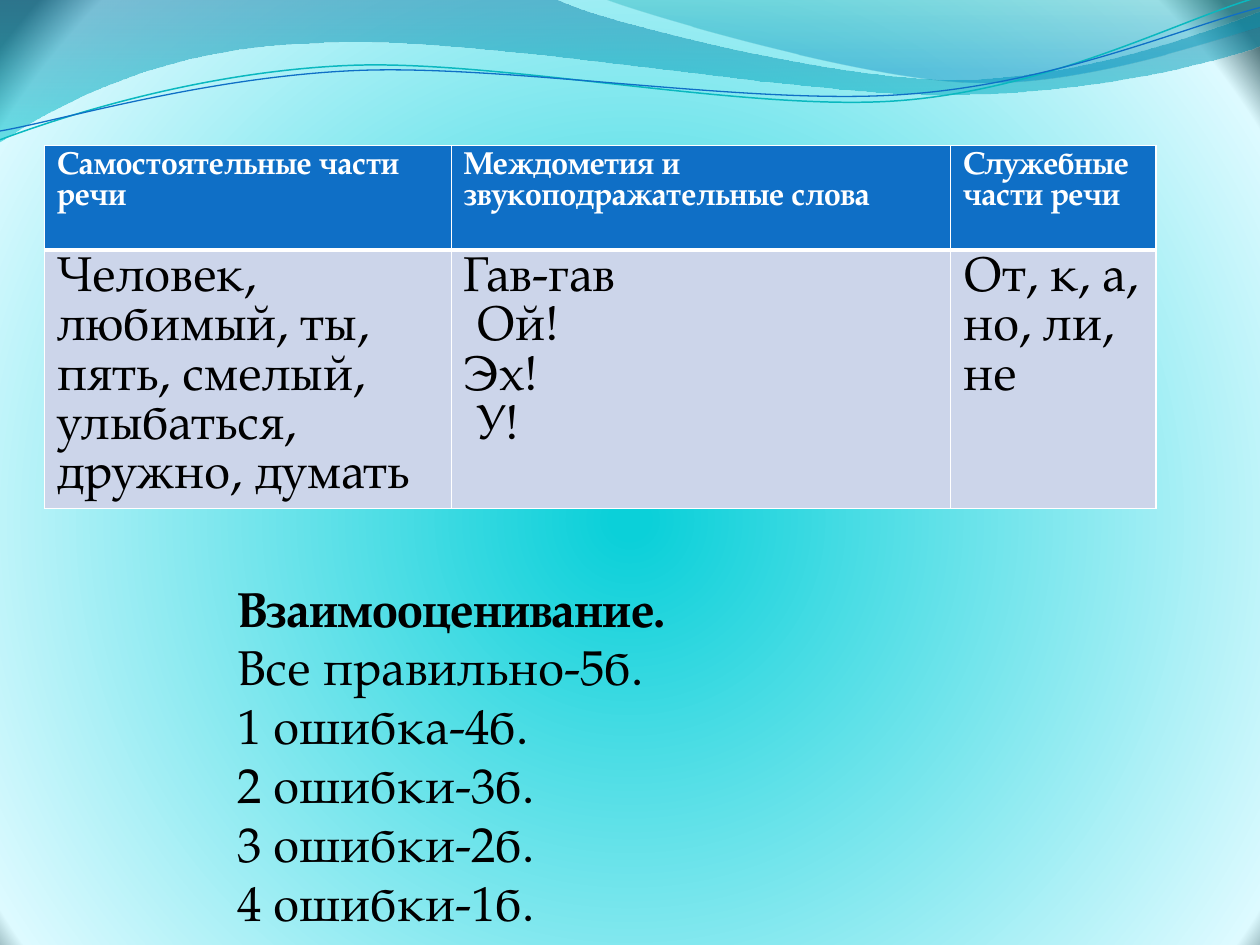
from lxml import etree
from pptx import Presentation
from pptx import util as u
from pptx.dml.color import RGBColor
from pptx.enum import text
from pptx.oxml import ns

COLORS = {
    "white": "FFFFFF", "black": "000000", "header": "0F6FC6", "body": "CCD5EA",
    "glow": "0BD0D9", "haze": "DDFAFF", "corner": "52767C",
    "wave_blue": "0074A1", "wave_cyan": "00C6CF",
    "fold_teal": "00A1A9", "fold_blue": "008BBF",
    "teal_line": "0AB8BF", "blue_line": "0F6FC6",
}
FONT = "TeX Gyre Pagella"
DOWNWARD = '<a:lin ang="5400000" scaled="0"/>'
RADIAL = ('<a:path path="circle"><a:fillToRect l="10000" t="110000" '
          'r="10000" b="100000"/></a:path>')

BANDS = [
    ([(0, 0), (440, -1),
      (476, 17, 664, 63, 758, 63), (853, 63, 958, 26, 1000, 9), (1001, 36),
      (983, 44, 870, 76, 746, 75), (622, 75, 382, 28, 257, 34),
      (129, 36, 46, 83, -1, 113), (0, 0)],
     [(0, "wave_blue", 45), (100, "wave_cyan", 55)]),
    ([(479, -1), (509, 11, 682, 62, 769, 65), (856, 69, 961, 32, 1000, 21),
      (1000, 0), (479, -1)],
     [(0, "fold_teal", 30), (80, "fold_blue", 45)]),
]
STRANDS = [
    ([(0, 111), (48, 93, 158, 57, 277, 52), (395, 47, 593, 89, 713, 80),
      (833, 71, 938, 15, 998, -2)], "teal_line", 0.85),
    ([(0, 104), (47, 96, 164, 61, 283, 56), (403, 51, 597, 84, 717, 75),
      (836, 67, 941, 21, 1000, 6)], "blue_line", 0.75),
]
HEADINGS = ["Самостоятельные части речи",
            "Междометия и звукоподражательные слова",
            "Служебные части речи"]
WORDS = [["Человек, любимый, ты, пять, смелый, улыбаться, дружно, думать"],
         ["Гав-гав", "Ой!", "Эх!", "У!"],
         ["От, к, а, но, ли, не"]]
INDENTED = {"Ой!", "У!"}
SCORES = ["Взаимооценивание.", "Все правильно-5б.", "1 ошибка-4б.",
          "2 ошибки-3б.", "3 ошибки-2б.", "4 ошибки-1б."]


def rgb(name):
    """Return the named colour."""
    return RGBColor.from_string(COLORS[name])


def apply_format(target, values):
    """Set every attribute in values on target."""
    for name, value in values.items():
        setattr(target, name, value)


def shade(owner, fill, stops, direction):
    """Give a fill gradient stops of (percent, colour, opacity)."""
    fill.gradient()
    gradient = owner.element.xpath(".//a:gradFill")[0]
    for child in list(gradient):
        gradient.remove(child)
    marks = "".join(
        f'<a:gs pos="{place * 1000}"><a:srgbClr val="{COLORS[name]}">'
        f'<a:alpha val="{opacity * 1000}"/></a:srgbClr></a:gs>'
        for place, name, opacity in stops)
    parts = etree.fromstring(
        f'<r {ns.nsdecls("a")}><a:gsLst>{marks}</a:gsLst>{direction}</r>')
    gradient.extend(list(parts))


def add_curve(slide, box, outline, close):
    """Draw lines and cubic curves in thousandths of the box width."""
    left, top, width = box
    points = [segment[i:i + 2] for segment in outline[1:]
              for i in range(0, len(segment), 2)]
    builder = slide.shapes.build_freeform(*outline[0], scale=width / 1000)
    builder.add_line_segments(points, close=close)
    curve = builder.convert_to_shape(left, top)
    curve.shadow.inherit = False
    strokes = iter(curve.element.xpath(".//a:lnTo"))
    for segment in outline[1:]:
        stroke = next(strokes)
        if len(segment) == 6:
            bend = etree.Element(ns.qn("a:cubicBezTo"))
            stroke.addprevious(bend)
            for part in (stroke, next(strokes), next(strokes)):
                bend.append(part[0])
                part.getparent().remove(part)
    return curve


def add_waves(slide, box):
    """Draw the translucent bands and thin strands across the top."""
    for outline, stops in BANDS:
        band = add_curve(slide, box, outline, True)
        shade(band, band.fill, stops, DOWNWARD)
        band.line.fill.background()
    for outline, color, weight in STRANDS:
        strand = add_curve(slide, box, outline, False)
        strand.fill.background()
        strand.line.color.rgb = rgb(color)
        strand.line.width = u.Pt(weight)


def add_borders(cell, bottom):
    """Give a cell white borders with the given bottom weight."""
    properties = cell._tc.get_or_add_tcPr()
    for place, (side, weight) in enumerate(
            {"L": 1, "R": 1, "T": 1, "B": bottom}.items()):
        properties.insert(place, etree.fromstring(
            f'<a:ln{side} {ns.nsdecls("a")} w="{u.Pt(weight)}"><a:solidFill>'
            f'<a:srgbClr val="{COLORS["white"]}"/></a:solidFill></a:ln{side}>'))


def write_lines(frame, lines, color, font):
    """Write one paragraph per line with the given colour and font values."""
    for number, line in enumerate(lines):
        paragraph = frame.paragraphs[0] if number == 0 else frame.add_paragraph()
        if line in INDENTED:
            paragraph._p.get_or_add_pPr().set("marL", str(u.Cm(0.25)))
        run = paragraph.add_run()
        run.text = line
        apply_format(run.font, {"name": FONT, **font})
        run.font.color.rgb = rgb(color)


def add_parts_of_speech(slide, box):
    """Place the table of word classes."""
    left, top, width, height = box
    table = slide.shapes.add_table(2, 3, left, top, width, height).table
    for column, size in zip(table.columns, (8.2, 10.06, 4.14)):
        column.width = u.Cm(size)
    rows = [
        ([[heading] for heading in HEADINGS], "header", "white", 3, 2.11,
         {"size": u.Pt(18), "bold": True}),
        (WORDS, "body", "black", 1, 5.21, {"size": u.Pt(28), "bold": False}),
    ]
    for r, (contents, fill, color, bottom, height, font) in enumerate(rows):
        table.rows[r].height = u.Cm(height)
        for c, lines in enumerate(contents):
            cell = table.cell(r, c)
            cell.fill.solid()
            cell.fill.fore_color.rgb = rgb(fill)
            add_borders(cell, bottom)
            write_lines(cell.text_frame, lines, color, font)


def add_scores(slide, box):
    """Place the peer assessment scale."""
    frame = slide.shapes.add_textbox(*box).text_frame
    apply_format(frame, {"word_wrap": False,
                         "auto_size": text.MSO_AUTO_SIZE.SHAPE_TO_FIT_TEXT})
    write_lines(frame, SCORES, "black", {"size": u.Pt(28), "bold": False})
    frame.paragraphs[0].runs[0].font.bold = True


def main():
    """Build and save the slide."""
    deck = Presentation()
    apply_format(deck, {"slide_width": u.Cm(25.4), "slide_height": u.Cm(19.05)})
    slide = deck.slides.add_slide(deck.slide_layouts[6])
    shade(slide, slide.background.fill,
          [(2, "glow", 100), (94, "haze", 100), (100, "corner", 100)], RADIAL)
    add_waves(slide, (0, 0, deck.slide_width))
    add_parts_of_speech(slide, (u.Cm(0.9), u.Cm(2.93), u.Cm(22.4), u.Cm(7.32)))
    add_scores(slide, (u.Cm(4.53), u.Cm(11.53), u.Cm(10.41), u.Cm(7.42)))
    deck.save("out.pptx")


if __name__ == "__main__":
    main()
